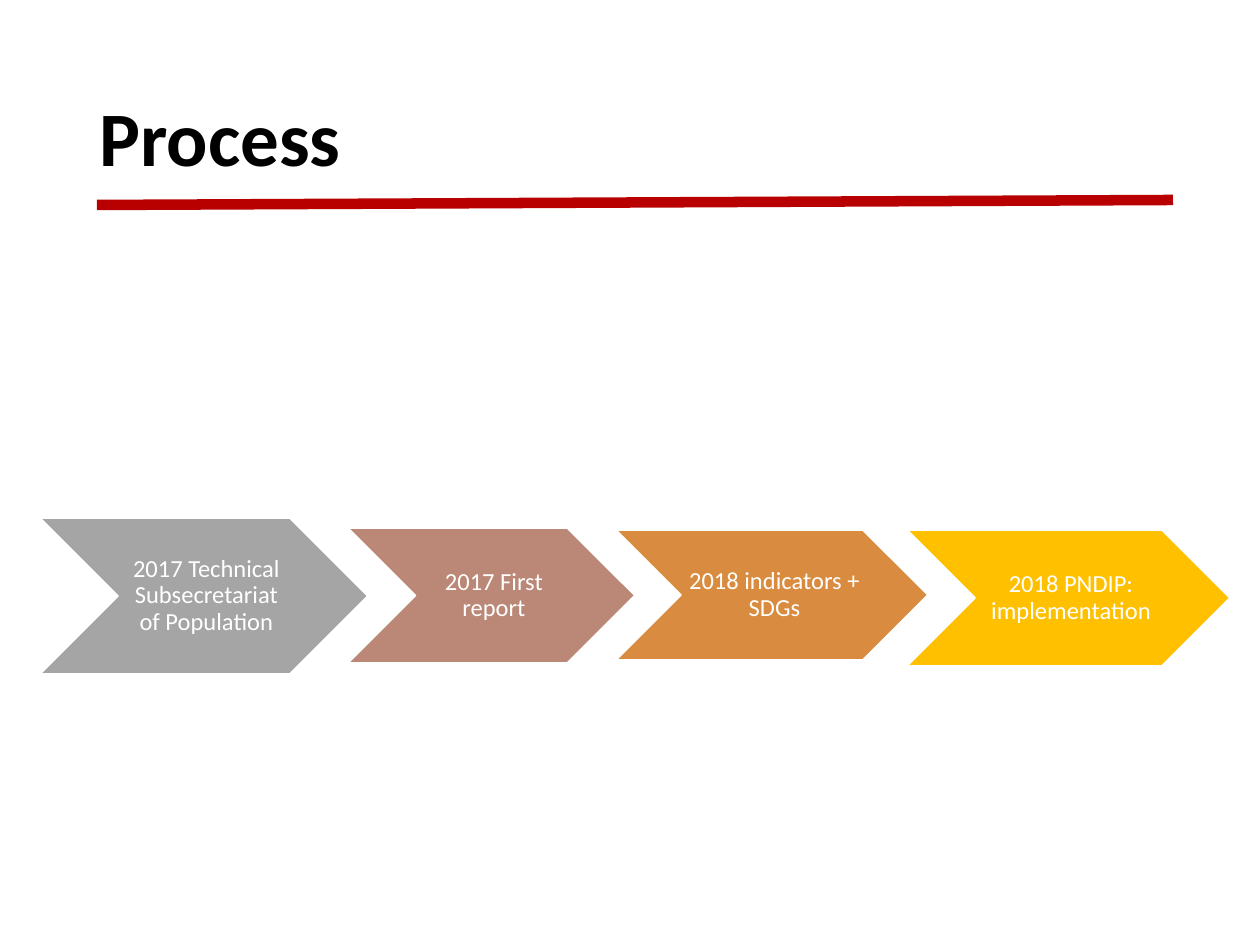
from pptx import Presentation
from pptx.dml.color import RGBColor
from pptx.enum.shapes import MSO_CONNECTOR, MSO_SHAPE
from pptx.enum.text import MSO_ANCHOR, PP_ALIGN
from pptx.oxml.ns import qn
from pptx.util import Emu, Pt
from lxml.etree import SubElement

HUES = {"paper": "FFFFFF", "ink": "000000", "rule": "B80000",
        "gray": "A5A5A5", "rose": "BB8776", "orange": "D98C3F", "gold": "FFC000"}

STEPS = [
    ("2017 Technical Subsecretariat of Population", "gray", (40, 518, 328, 156)),
    ("2017 First report", "rose", (348, 528, 287, 135)),
    ("2018 indicators + SDGs", "orange", (616, 530, 312, 130)),
    ("2018 PNDIP: implementation", "gold", (907, 530, 323, 136)),
]


def px(num):
    """Turn pixels at 126 to the inch into EMU."""
    return Emu(round(num * 914400 / 126))


def hue(name):
    """Look up a named colour."""
    return RGBColor.from_string(HUES[name])


def write(frame, text, size, tone, bold=False, align=PP_ALIGN.LEFT):
    """Set and format one paragraph, centred vertically."""
    frame.word_wrap = True
    frame.vertical_anchor = MSO_ANCHOR.MIDDLE
    frame.text = text
    para = frame.paragraphs[0]
    para.alignment = align
    para.line_spacing = 0.9
    font = para.runs[0].font
    font.name, font.size, font.bold = "Calibri", Pt(size), bold
    font.color.rgb = hue(tone)


def header(slide, box, text):
    """Place the title and the slightly rising rule across its foot."""
    left, top, width, height = box
    title = slide.shapes.add_textbox(*map(px, box))
    write(title.text_frame, text, 44, "ink", bold=True)
    rule = slide.shapes.add_connector(
        MSO_CONNECTOR.STRAIGHT, px(left + 10), px(top + height - 28),
        px(left + width), px(top + height - 33))
    rule.line.color.rgb = hue("rule")
    rule.line.width = Pt(6)
    SubElement(rule._element.spPr, qn("a:effectLst"))


def step(slide, box, text, tone):
    """Place one labelled chevron of the process."""
    arrow = slide.shapes.add_shape(MSO_SHAPE.CHEVRON, *map(px, box))
    arrow.shadow.inherit = False
    arrow.fill.solid()
    arrow.fill.fore_color.rgb = hue(tone)
    arrow.line.color.rgb = hue("paper")
    arrow.line.width = Pt(1)
    frame = arrow.text_frame
    frame.margin_left = px(7)
    frame.margin_top = frame.margin_right = frame.margin_bottom = px(2)
    write(frame, text, 14, "paper", align=PP_ALIGN.CENTER)


def main():
    """Build and save the process slide."""
    deck = Presentation()
    deck.slide_width, deck.slide_height = px(1260), px(945)
    slide = deck.slides.add_slide(deck.slide_layouts[6])
    header(slide, (87, 50, 1086, 183), "Process")
    for text, tone, box in STEPS:
        step(slide, box, text, tone)
    deck.save("out.pptx")


if __name__ == "__main__":
    main()
